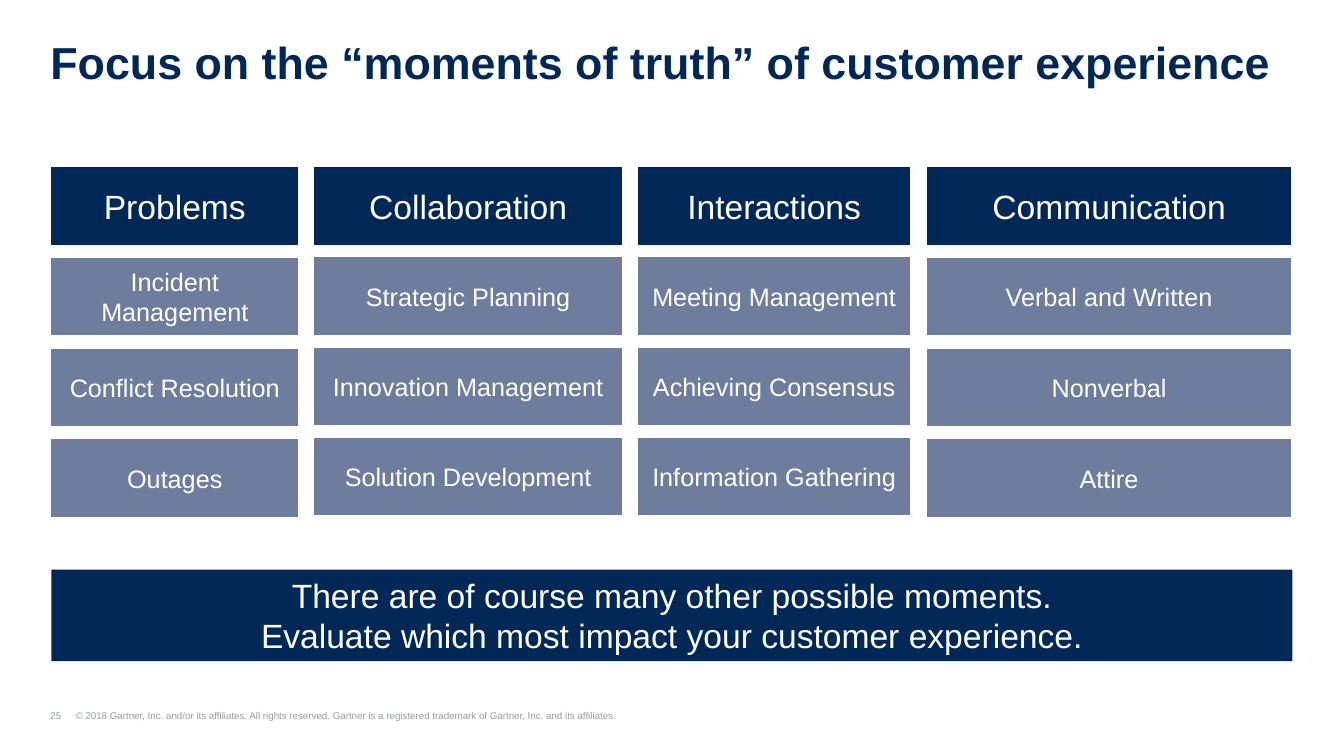
"""Build the slide on the moments of truth of customer experience."""
from dataclasses import dataclass

from lxml import etree
from pptx import Presentation
from pptx import util as u
from pptx.dml.color import RGBColor
from pptx.enum import shapes, text
from pptx.oxml import ns

TITLE = "Focus on the “moments of truth” of customer experience"
COLUMNS = [
    {"head": "Problems", "width": 177.8, "pitch": 64.8,
     "moments": ["Incident Management", "Conflict Resolution", "Outages"]},
    {"head": "Collaboration", "width": 221, "pitch": 64.4,
     "moments": ["Strategic Planning", "Innovation Management", "Solution Development"]},
    {"head": "Interactions", "width": 196, "pitch": 64.4,
     "moments": ["Meeting Management", "Achieving Consensus", "Information Gathering"]},
    {"head": "Communication", "width": 262.2, "pitch": 64.8,
     "moments": ["Verbal and Written", "Nonverbal", "Attire"]},
]
ADVICE = [
    "There are of course many other possible moments.",
    "Evaluate which most impact your customer experience.",
]
FOOTER = ("25\t© 2018 Gartner, Inc. and/or its affiliates. All rights reserved.\u00a0"
          "Gartner is a registered trademark of Gartner, Inc. and its affiliates.")

LEFT, GRID_TOP, GAP, TILE_HEIGHT = 36, 118.8, 10.1, 56.8
FOOTER_INDENT = 18


@dataclass(frozen=True)
class Theme:
    """Colours, font and type sizes."""
    navy: str = "002856"
    slate: str = "6E7D9D"
    white: str = "FFFFFF"
    grey: str = "979D9D"
    font: str = "Arial"
    title: float = 32
    head: float = 24
    moment: float = 18
    footer: float = 7


THEME = Theme()


def write(box, lines, size, colour, anchor, align, bold=False):
    """Set and format the lines of a box."""
    frame = box.text_frame
    frame.word_wrap = True
    frame.vertical_anchor = anchor
    frame.text = "\n".join(lines)
    for para in frame.paragraphs:
        para.alignment = align
        for span in para.runs:
            span.font.name = THEME.font
            span.font.size = u.Pt(size)
            span.font.bold = bold
            span.font.color.rgb = RGBColor.from_string(colour)


def add_tile(page, area, lines, fill, size, outlined=True, anchor=text.MSO_ANCHOR.MIDDLE):
    """Add a filled rectangle with centred white text."""
    tile = page.shapes.add_shape(shapes.MSO_SHAPE.RECTANGLE, *map(u.Pt, area))
    tile.shadow.inherit = False
    tile.fill.solid()
    tile.fill.fore_color.rgb = RGBColor.from_string(fill)
    if outlined:
        tile.line.color.rgb = RGBColor.from_string(THEME.white)
        tile.line.width = u.Pt(1.5)
    else:
        tile.line.fill.background()
    write(tile, lines, size, THEME.white, anchor, text.PP_ALIGN.CENTER)


def add_label(page, area, line, size, colour, anchor, bold=False):
    """Add a text box without margins and return its paragraph."""
    box = page.shapes.add_textbox(*map(u.Pt, area))
    frame = box.text_frame
    frame.margin_left = frame.margin_right = frame.margin_top = frame.margin_bottom = 0
    write(box, [line], size, colour, anchor, text.PP_ALIGN.LEFT, bold)
    return frame.paragraphs[0]


def add_grid(page):
    """Add each column as a head with its moments below."""
    left = LEFT
    for column in COLUMNS:
        width = column["width"]
        add_tile(page, (left, GRID_TOP, width, TILE_HEIGHT),
                 [column["head"]], THEME.navy, THEME.head)
        for row, moment in enumerate(column["moments"], start=1):
            top = GRID_TOP + row * column["pitch"]
            add_tile(page, (left, top, width, TILE_HEIGHT),
                     [moment], THEME.slate, THEME.moment)
        left += width + GAP


def add_footer(page):
    """Add the page number and copyright line, parted by a tab stop."""
    para = add_label(page, (LEFT, 506.9, 565.2, 8.6), FOOTER, THEME.footer,
                     THEME.grey, text.MSO_ANCHOR.BOTTOM)
    indent = u.Pt(FOOTER_INDENT)
    properties = para._p.get_or_add_pPr()
    properties.set("marL", str(indent))
    properties.set("indent", str(-indent))
    tabs = etree.SubElement(properties, ns.qn("a:tabLst"))
    etree.SubElement(tabs, ns.qn("a:tab"), pos=str(indent), algn="l")


def main():
    """Build and save the deck."""
    deck = Presentation()
    deck.slide_width, deck.slide_height = u.Pt(960), u.Pt(540)
    page = deck.slides.add_slide(deck.slide_layouts[6])
    add_footer(page)
    add_grid(page)
    add_tile(page, (36.7, 406.8, 886.4, 65.5), ADVICE, THEME.navy, THEME.head,
             outlined=False, anchor=text.MSO_ANCHOR.TOP)
    title = add_label(page, (LEFT, 28.8, 887.8, 34.6), TITLE, THEME.title,
                      THEME.navy, text.MSO_ANCHOR.TOP, bold=True)
    title.line_spacing = 0.9
    deck.save("out.pptx")


if __name__ == "__main__":
    main()
